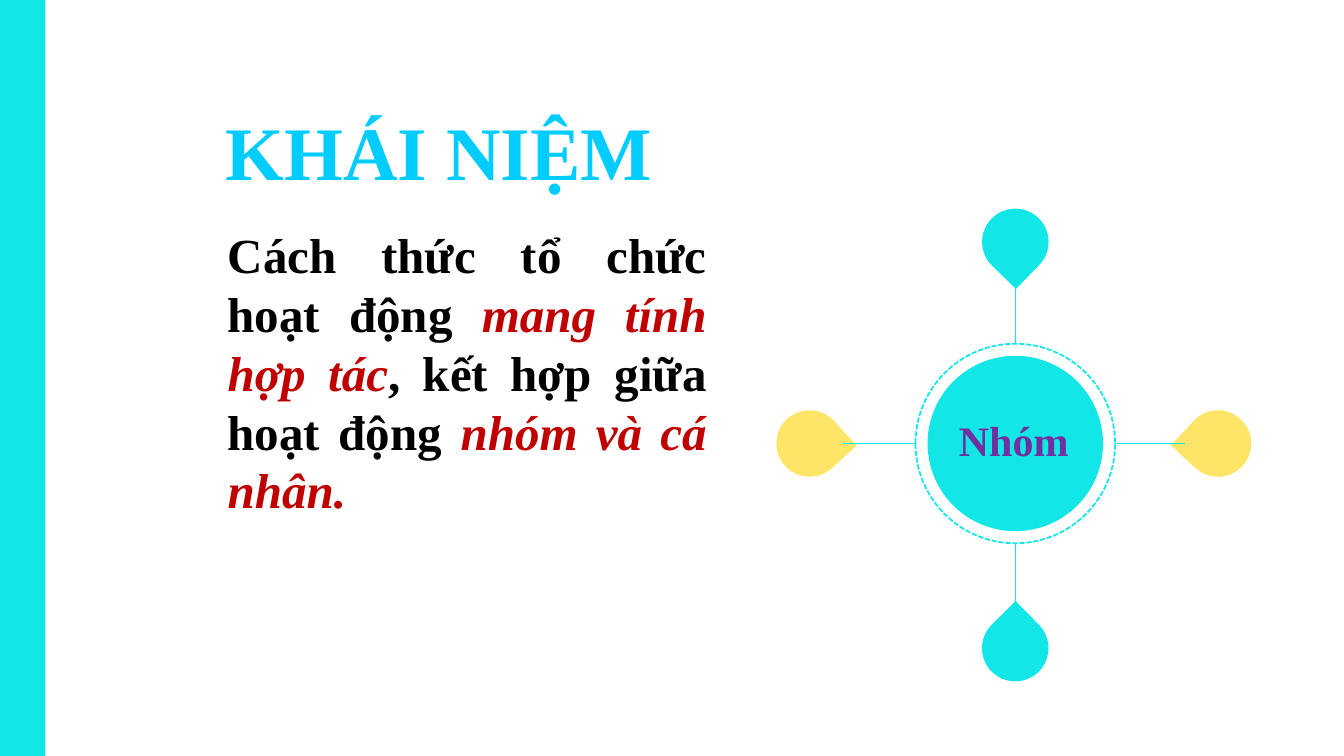
"""Builds the slide that defines the group-work concept beside a hub with four drops."""
from lxml.etree import SubElement, fromstring
from pptx import Presentation
from pptx.dml.color import RGBColor
from pptx.enum.dml import MSO_LINE
from pptx.enum.shapes import MSO_CONNECTOR, MSO_SHAPE
from pptx.enum.text import MSO_ANCHOR, MSO_AUTO_SIZE, PP_ALIGN
from pptx.oxml.ns import qn
from pptx.util import Inches, Pt

CYAN, YELLOW, BLACK, RED = "12E6E6", "FFE567", "000000", "C00000"
HUB_X, HUB_Y = 10.07, 4.4


def paint(color_format, color):
    color_format.rgb = RGBColor.from_string(color)


def add_text(box, align, size, pieces):
    left, top, width, height = box
    frame = slide.shapes.add_textbox(
        Inches(left), Inches(top), Inches(width), Inches(height)).text_frame
    frame.word_wrap = True
    paragraph = frame.paragraphs[0]
    paragraph.alignment = align
    for words, color, italic in pieces:
        run = paragraph.add_run()
        run.text = words
        run.font.name = "Times New Roman"
        run.font.size = Pt(size)
        run.font.bold = True
        run.font.italic = italic
        paint(run.font.color, color)
    return frame


deck = Presentation()
deck.slide_width, deck.slide_height = Inches(13.33), Inches(7.5)
slide = deck.slides.add_slide(deck.slide_layouts[6])

solids = [
    (MSO_SHAPE.RECTANGLE, 0, 0, 0.45, 7.5, 0, CYAN),
    (MSO_SHAPE.OVAL, HUB_X - 0.87, HUB_Y - 0.87, 1.74, 1.74, 0, CYAN),
]
for left, top, angle, color in [
    (9.74, 2.07, 134.2, CYAN),
    (9.74, 6.1, 315.5, CYAN),
    (11.75, 4.07, 222.8, YELLOW),
    (7.7, 4.07, 47.6, YELLOW),
]:
    solids.append((MSO_SHAPE.TEAR, left, top, 0.66, 0.66, angle, color))

for preset, left, top, width, height, angle, color in solids:
    solid = slide.shapes.add_shape(
        preset, Inches(left), Inches(top), Inches(width), Inches(height))
    solid.rotation = angle
    solid.shadow.inherit = False
    solid.fill.solid()
    paint(solid.fill.fore_color, color)
    solid.line.fill.background()

ring = slide.shapes.add_shape(
    MSO_SHAPE.OVAL, Inches(HUB_X - 0.99), Inches(HUB_Y - 0.99), Inches(1.98), Inches(1.98))
ring.shadow.inherit = False
ring.fill.background()
paint(ring.line.color, CYAN)
ring.line.width = Pt(1.25)
ring.line.dash_style = MSO_LINE.SQUARE_DOT

for start_x, start_y, end_x, end_y in [
    (8.36, HUB_Y, HUB_X - 0.99, HUB_Y),
    (HUB_X, 6.1, HUB_X, HUB_Y + 0.99),
    (11.75, HUB_Y, HUB_X + 0.99, HUB_Y),
    (HUB_X, 2.73, HUB_X, HUB_Y - 0.99),
]:
    spoke = slide.shapes.add_connector(
        MSO_CONNECTOR.STRAIGHT,
        Inches(start_x), Inches(start_y), Inches(end_x), Inches(end_y))
    paint(spoke.line.color, CYAN)
    spoke.line.width = Pt(0.5)
    SubElement(spoke._element.spPr, qn("a:effectLst"))

heading = add_text((2.14, 1.15, 4.92, 0.79), PP_ALIGN.LEFT, 54,
                   [("KHÁI NIỆM", "00CCFF", False)])
heading.vertical_anchor = MSO_ANCHOR.MIDDLE
heading.paragraphs[0].line_spacing = 0.9
heading.paragraphs[0].space_before = Pt(10)

definition = add_text((2.16, 2.18, 4.95, 3.05), PP_ALIGN.JUSTIFY, 35, [
    ("Cách thức tổ chức hoạt động ", BLACK, False),
    ("mang tính hợp tác", RED, True),
    (", kết hợp giữa hoạt động ", BLACK, False),
    ("nhóm và cá nhân.", RED, True),
])
definition.auto_size = MSO_AUTO_SIZE.SHAPE_TO_FIT_TEXT

hub_label = add_text((9.29, 4.06, 1.53, 0.61), PP_ALIGN.CENTER, 30,
                     [("Nhóm", "7030A0", False)])
hub_label.auto_size = MSO_AUTO_SIZE.SHAPE_TO_FIT_TEXT
label_properties = hub_label.paragraphs[0].runs[0].font._element
label_properties.find(qn("a:solidFill")).addnext(fromstring(
    '<a:effectLst xmlns:a="http://schemas.openxmlformats.org/drawingml/2006/main">'
    '<a:outerShdw blurRad="38100" dist="38100" dir="5400000">'
    '<a:srgbClr val="000000"><a:alpha val="45000"/></a:srgbClr>'
    '</a:outerShdw></a:effectLst>'))

deck.save("out.pptx")
